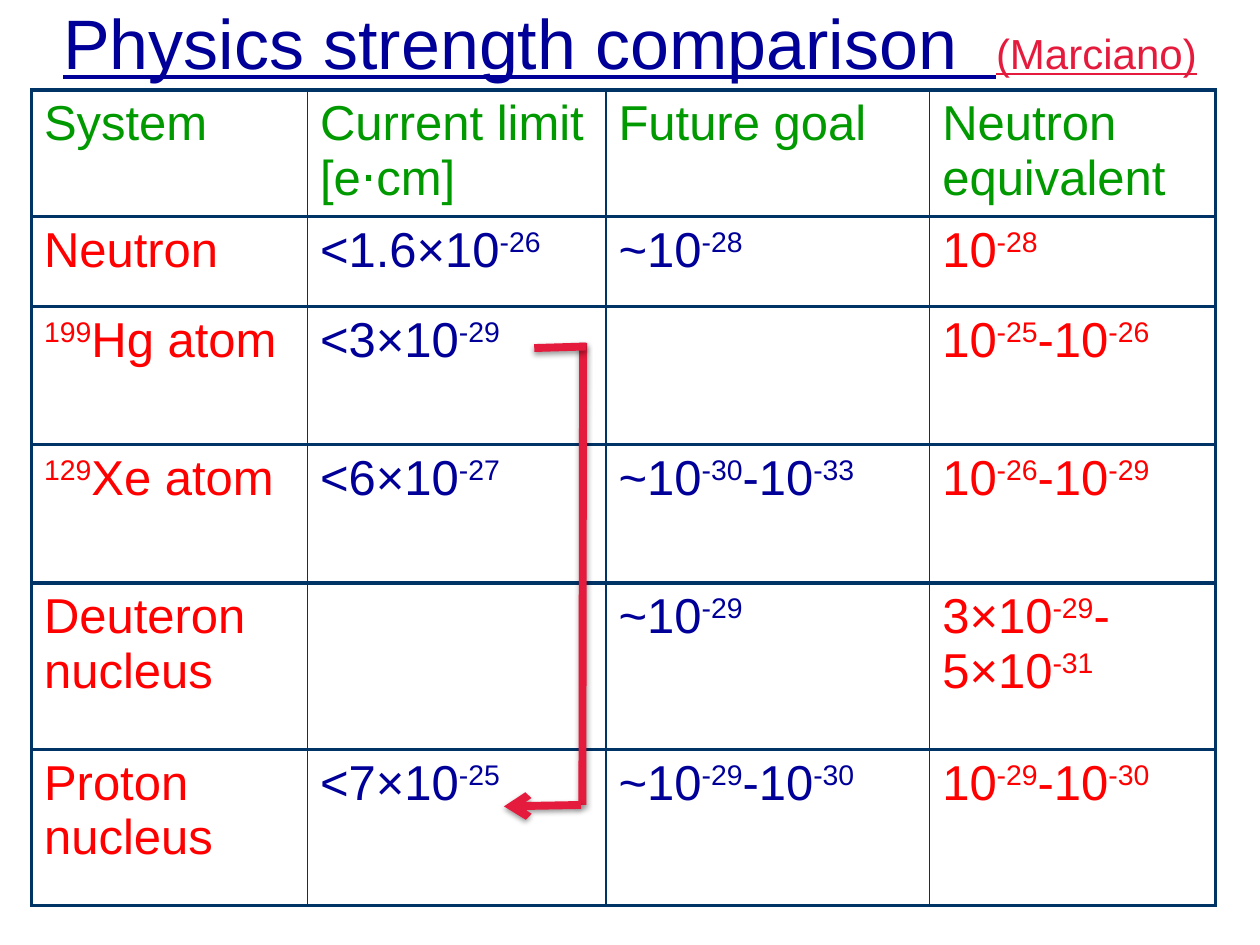
from typing import NamedTuple

from lxml import etree
from pptx import Presentation
from pptx.dml.color import RGBColor
from pptx.enum.shapes import MSO_CONNECTOR
from pptx.enum.text import MSO_ANCHOR, MSO_AUTO_SIZE, PP_ALIGN
from pptx.oxml.ns import qn
from pptx.util import Pt

STRAIGHT = MSO_CONNECTOR.STRAIGHT
MIDDLE = MSO_ANCHOR.MIDDLE
NO_AUTOFIT = MSO_AUTO_SIZE.NONE
CENTER = PP_ALIGN.CENTER

FONT = "Arial"
COLORS = {
    "navy": "000099",
    "crimson": "E51B3D",
    "green": "009900",
    "red": "FF0000",
    "border": "003366",
    "shadow": "000000",
}
THIN, THICK = 1, 2.25

COLUMN_WIDTHS = [157.7, 170.6, 185, 163.4]
COLUMN_COLORS = ["red", "navy", "navy", "red"]


class SystemRow(NamedTuple):
    """One table row; text between carets is superscript."""
    height: float
    texts: tuple[str, str, str, str]


class ArrowPart(NamedTuple):
    start: tuple[float, float]
    end: tuple[float, float]
    has_head: bool = False


ROWS = [
    SystemRow(72.5, ("System", "Current limit [e⋅cm]", "Future goal", "Neutron equivalent")),
    SystemRow(51.3, ("Neutron", "<1.6×10^-26^", "~10^-28^", "10^-28^")),
    SystemRow(79, ("^199^Hg atom", "<3×10^-29^", "", "10^-25^-10^-26^")),
    SystemRow(79, ("^129^Xe atom", "<6×10^-27^", "~10^-30^-10^-33^", "10^-26^-10^-29^")),
    SystemRow(95.2, ("Deuteron nucleus", "", "~10^-29^", "3×10^-29^- 5×10^-31^")),
    SystemRow(89.3, ("Proton nucleus", "<7×10^-25^", "~10^-29^-10^-30^", "10^-29^-10^-30^")),
]

ARROW_PARTS = [
    ArrowPart((333.2, 196), (332.8, 460)),
    ArrowPart((334.8, 198), (305.3, 198.9)),
    ArrowPart((332, 460), (288, 460.8), has_head=True),
]


def rgb(name: str) -> RGBColor:
    return RGBColor.from_string(COLORS[name])


def add_color(parent, name: str):
    fill = etree.SubElement(parent, qn("a:solidFill"))
    etree.SubElement(fill, qn("a:srgbClr"), val=COLORS[name])


def add_title(slide) -> None:
    title = slide.shapes.title
    title.left, title.top, title.width, title.height = Pt(0), Pt(0), Pt(720), Pt(47.5)
    frame = title.text_frame
    frame.auto_size = NO_AUTOFIT
    frame.vertical_anchor = MIDDLE
    heading = frame.paragraphs[0]
    heading.alignment = CENTER
    heading.font.name = FONT
    heading.font.underline = True
    for text, size, color in (
        ("Physics strength comparison  ", 40, "navy"),
        ("(Marciano)", 24, "crimson"),
    ):
        run = heading.add_run()
        run.text = text
        run.font.size = Pt(size)
        run.font.color.rgb = rgb(color)


def write_cell(cell, text: str, color: str) -> None:
    paragraph = cell.text_frame.paragraphs[0]
    paragraph.font.name = FONT
    paragraph.font.size = Pt(28)
    paragraph.font.color.rgb = rgb(color)
    for index, part in enumerate(text.split("^")):
        if part:
            run = paragraph.add_run()
            run.text = part
            if index % 2:
                run._r.get_or_add_rPr().set("baseline", "30000")


def set_borders(cell, left: float, right: float) -> None:
    """Outline the cell with thick horizontal edges and the given vertical ones."""
    properties = cell._tc.get_or_add_tcPr()
    edges = (("a:lnL", left), ("a:lnR", right), ("a:lnT", THICK), ("a:lnB", THICK))
    for position, (tag, width) in enumerate(edges):
        edge = etree.Element(qn(tag), w=str(Pt(width)))
        add_color(edge, "border")
        properties.insert(position, edge)


def add_comparison_table(slide) -> None:
    height = sum(row.height for row in ROWS)
    table = slide.shapes.add_table(
        len(ROWS), len(COLUMN_WIDTHS), Pt(18), Pt(51.4), Pt(sum(COLUMN_WIDTHS)), Pt(height)
    ).table
    table.first_row = False
    table.horz_banding = False
    for column, width in zip(table.columns, COLUMN_WIDTHS):
        column.width = Pt(width)
    last = len(COLUMN_WIDTHS) - 1
    for row_index, row in enumerate(ROWS):
        table.rows[row_index].height = Pt(row.height)
        for column_index, text in enumerate(row.texts):
            cell = table.cell(row_index, column_index)
            color = COLUMN_COLORS[column_index] if row_index else "green"
            write_cell(cell, text, color)
            cell.fill.background()
            set_borders(
                cell,
                THICK if column_index == 0 else THIN,
                THICK if column_index == last else THIN,
            )


def add_shadow(connector) -> None:
    effects = etree.SubElement(connector._element.spPr, qn("a:effectLst"))
    shadow = etree.SubElement(
        effects, qn("a:outerShdw"), blurRad=str(Pt(3.1)), dist=str(Pt(1.6)),
        dir="5400000", rotWithShape="0",
    )
    shade = etree.SubElement(shadow, qn("a:srgbClr"), val=COLORS["shadow"])
    etree.SubElement(shade, qn("a:alpha"), val="38000")


def add_bent_arrow(slide) -> None:
    """Link the mercury limit to the proton limit."""
    group = slide.shapes.add_group_shape()
    for part in ARROW_PARTS:
        ends = [Pt(value) for value in part.start + part.end]
        connector = group.shapes.add_connector(STRAIGHT, *ends)
        connector.line.color.rgb = rgb("crimson")
        connector.line.width = Pt(4.5)
        if part.has_head:
            etree.SubElement(connector.line._get_or_add_ln(), qn("a:tailEnd"), type="arrow")
        add_shadow(connector)


def main() -> None:
    presentation = Presentation()
    presentation.slide_width, presentation.slide_height = Pt(720), Pt(540)
    slide = presentation.slides.add_slide(presentation.slide_layouts[5])
    add_title(slide)
    add_comparison_table(slide)
    add_bent_arrow(slide)
    presentation.save("out.pptx")


if __name__ == "__main__":
    main()
